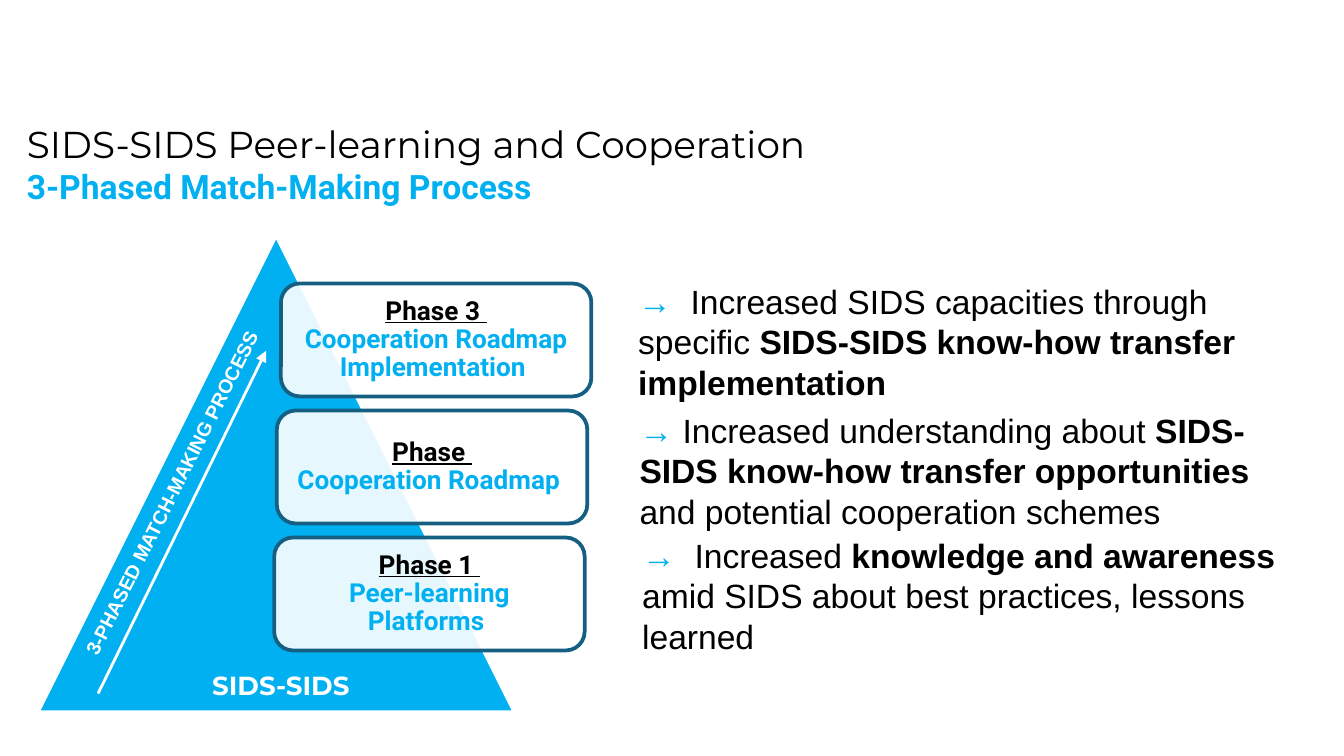
from pptx import Presentation
from pptx.dml.color import RGBColor
from pptx.enum.shapes import MSO_CONNECTOR, MSO_SHAPE
from pptx.enum.text import MSO_ANCHOR, MSO_AUTO_SIZE, PP_ALIGN
from pptx.oxml.ns import qn
from pptx.util import Inches, Pt
from lxml.etree import SubElement

THEME = {
    "blue": RGBColor(0x00, 0xB0, 0xF0),
    "navy": RGBColor(0x15, 0x60, 0x82),
    "black": RGBColor(0, 0, 0),
    "white": RGBColor(255, 255, 255),
    "heading": ("Montserrat", 20),
    "subheading": ("Roboto", 18),
    "card": ("Roboto", 14),
    "base": ("Montserrat", 14),
    "side": ("Arial", 10.5),
    "body": ("Arial", 18),
}

SLIDE_WIDTH = 10
SLIDE_HEIGHT = SLIDE_WIDTH * 9 / 16

HEADING = "SIDS-SIDS Peer-learning and Cooperation"
SUBHEADING = "3-Phased Match-Making Process"
PYRAMID_BASE = "SIDS-SIDS"
PYRAMID_SIDE = "3-PHASED MATCH-MAKING PROCESS"
PHASES = [  # top to bottom: left edge, phase, activity
    (2.09, "Phase 3 ", "Cooperation Roadmap Implementation "),
    (2.06, "Phase ", "Cooperation Roadmap "),
    (2.04, "Phase 1 ", "Peer-learning Platforms "),
]
# Box (left, top, width, height), gap after the arrow,
# then (text, bold) pieces; "\n" is a line break
OUTCOMES = [
    ((4.65, 2.04, 5.04, 1.01), 0.39,
     [("Increased SIDS capacities through specific ", False),
      ("SIDS-SIDS know-how transfer implementation", True)]),
    ((4.66, 3.0, 5.28, 1.01), 0.32,
     [("Increased understanding about ", False),
      ("SIDS-SIDS know-how transfer opportunities", True),
      ("\n", False),
      ("and potential cooperation schemes", False)]),
    ((4.68, 3.93, 5.04, 1.01), 0.39,
     [("Increased ", False),
      ("knowledge and awareness ", True),
      ("amid SIDS about best practices, lessons learned", False)]),
]
CARD_TOP, CARD_STEP = 2.11, 0.945
CARD_WIDTH, CARD_HEIGHT = 2.31, 0.84


def inches(*lengths):
    return [Inches(length) for length in lengths]


def add_run(paragraph, text, style, color, bold=False, underline=False):
    run = paragraph.add_run()
    run.text = text
    font = run.font
    font.name, size = THEME[style]
    font.size = Pt(size)
    font.color.rgb = THEME[color]
    font.bold = bold
    font.underline = underline


def add_text_box(slide, box):
    holder = slide.shapes.add_textbox(*inches(*box))
    holder.text_frame.word_wrap = True
    return holder


def add_solid(slide, preset, box, fill, line):
    solid = slide.shapes.add_shape(preset, *inches(*box))
    solid.shadow.inherit = False
    solid.fill.solid()
    solid.fill.fore_color.rgb = THEME[fill]
    solid.line.color.rgb = THEME[line]
    solid.line.width = Pt(2)
    return solid


def add_title(slide):
    title = slide.shapes.title
    title.left, title.top, title.width, title.height = inches(0.1, 0.85, 9.18, 0.74)
    frame = title.text_frame
    frame.word_wrap = True
    frame.auto_size = MSO_AUTO_SIZE.NONE
    frame.vertical_anchor = MSO_ANCHOR.TOP
    first, second = frame.paragraphs[0], frame.add_paragraph()
    first.alignment = second.alignment = PP_ALIGN.JUSTIFY
    add_run(first, HEADING, "heading", "black")
    add_run(second, SUBHEADING, "subheading", "blue", bold=True)


def add_pyramid(slide):
    add_solid(slide, MSO_SHAPE.ISOSCELES_TRIANGLE, (0.28, 1.75, 3.55, 3.55), "blue", "white")
    base = add_text_box(slide, (1.48, 4.93, 1.25, 0.34))
    add_run(base.text_frame.paragraphs[0], PYRAMID_BASE, "base", "white", bold=True)
    side = add_text_box(slide, (-0.28, 3.33, 3.31, 0.28))
    side.rotation = 296.6
    add_run(side.text_frame.paragraphs[0], PYRAMID_SIDE, "side", "white", bold=True)

    climb = slide.shapes.add_connector(MSO_CONNECTOR.STRAIGHT, *inches(0.73, 5.16, 1.98, 2.61))
    climb.line.color.rgb = THEME["white"]
    climb.line.width = Pt(1.5)
    line_properties = climb._element.spPr.find(qn("a:ln"))
    SubElement(line_properties, qn("a:tailEnd"), type="triangle")
    SubElement(climb._element.spPr, qn("a:effectLst"))


def add_phase_card(slide, top, left, phase, activity):
    card = add_solid(slide, MSO_SHAPE.ROUNDED_RECTANGLE,
                     (left, top, CARD_WIDTH, CARD_HEIGHT), "white", "navy")
    fill_color = card._element.spPr.find(qn("a:solidFill"))[0]
    SubElement(fill_color, qn("a:alpha"), val="90000")
    frame = card.text_frame
    frame.word_wrap = True
    frame.vertical_anchor = MSO_ANCHOR.MIDDLE
    frame.margin_left = frame.margin_right = Inches(0.1)
    frame.margin_top = frame.margin_bottom = Inches(0.1)
    paragraph = frame.paragraphs[0]
    paragraph.alignment = PP_ALIGN.CENTER
    paragraph.line_spacing = 0.9
    add_run(paragraph, phase, "card", "black", bold=True, underline=True)
    paragraph.add_line_break()
    add_run(paragraph, activity, "card", "blue", bold=True)


def add_outcome(slide, box, arrow_gap, pieces):
    paragraph = add_text_box(slide, box).text_frame.paragraphs[0]
    tabs = SubElement(paragraph._p.get_or_add_pPr(), qn("a:tabLst"))
    SubElement(tabs, qn("a:tab"), pos=str(Inches(arrow_gap)), algn="l")
    add_run(paragraph, "→", "body", "blue", bold=True)
    add_run(paragraph, "\t", "body", "black")
    for text, bold in pieces:
        if text == "\n":
            paragraph.add_line_break()
        else:
            add_run(paragraph, text, "body", "black", bold)


def main():
    deck = Presentation()
    deck.slide_width, deck.slide_height = inches(SLIDE_WIDTH, SLIDE_HEIGHT)
    slide = deck.slides.add_slide(deck.slide_layouts[5])  # Title Only
    add_title(slide)
    add_pyramid(slide)
    for index, phase in enumerate(PHASES):
        add_phase_card(slide, CARD_TOP + index * CARD_STEP, *phase)
    for outcome in OUTCOMES:
        add_outcome(slide, *outcome)
    deck.save("out.pptx")


if __name__ == "__main__":
    main()
